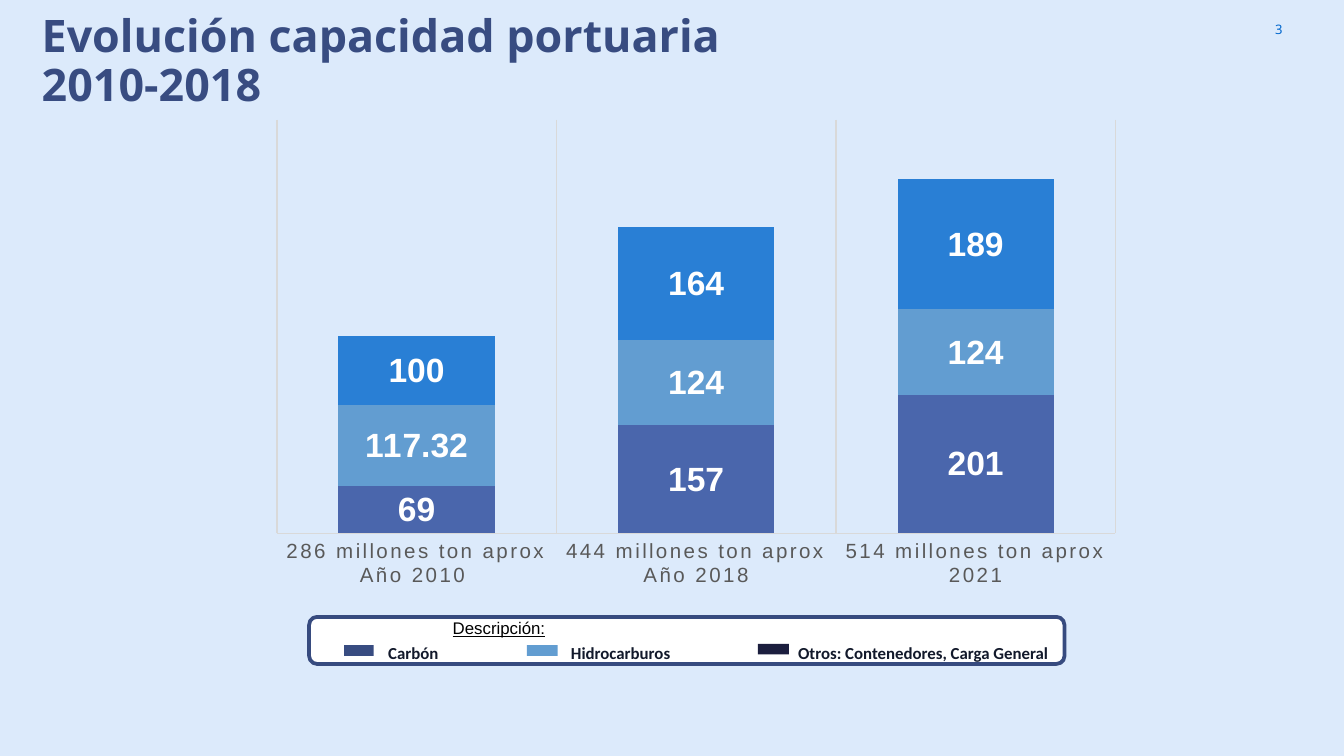
"""Build the port capacity slide with a stacked column chart and its legend."""
from dataclasses import dataclass

from lxml import etree
from pptx import Presentation
from pptx import util as u
from pptx.chart import data
from pptx.dml.color import RGBColor
from pptx.enum import chart as ch, shapes, text
from pptx.oxml import ns


@dataclass(frozen=True)
class Theme:
    back: str = "DCEAFB"
    navy: str = "384C81"
    frame: str = "374B7F"
    white: str = "FFFFFF"
    black: str = "000000"
    ink: str = "12192B"
    number: str = "0066CD"
    label: str = "595959"
    grid: str = "D9D9D9"
    head: str = "Noto Sans"
    body: str = "Arial"
    key: str = "Calibri"
    title: float = 24
    value: float = 18
    axis: float = 11
    small: float = 9
    page: float = 7


@dataclass(frozen=True)
class Box:
    left: float
    top: float
    width: float
    height: float

    def place(self) -> tuple:
        return tuple(u.Inches(v) for v in (self.left, self.top, self.width, self.height))


@dataclass(frozen=True)
class Series:
    name: str
    values: tuple
    color: str
    format: str


@dataclass(frozen=True)
class Key:
    label: str
    color: str
    swatch: Box
    box: Box


THEME = Theme()
CATS = ("286 millones ton aprox Año 2010 ", "444 millones ton aprox Año 2018",
        "514 millones ton aprox 2021")
SERIES = (
    Series("Series 1", (69, 157, 201), "4A66AC", "0"),
    Series("Series 2", (117.32, 124, 124), "629DD1", "General"),
    Series("Series 3", (100, 164, 189), "297FD5", "0"),
)
KEYS = (
    Key("Carbón", THEME.navy, Box(2.56, 4.8, 0.22, 0.08), Box(2.79, 4.73, 2.85, 0.25)),
    Key("Hidrocarburos", "629DD1", Box(3.92, 4.8, 0.23, 0.08), Box(4.15, 4.73, 1.96, 0.25)),
    Key("Otros: Contenedores, Carga General", "1B1E3E",
        Box(5.64, 4.79, 0.23, 0.08), Box(5.84, 4.73, 2.23, 0.25)),
)


def style(font, name: str, size: float, color: str, bold: bool = False) -> None:
    font.name, font.size, font.bold = name, u.Pt(size), bold
    font.color.rgb = RGBColor.from_string(color)


def add_text(slide, box: Box, words: str, name: str, size: float, color: str,
             bold: bool = False):
    shape = slide.shapes.add_textbox(*box.place())
    frame = shape.text_frame
    frame.word_wrap = True
    frame.text = words
    style(frame.paragraphs[0].runs[0].font, name, size, color, bold)
    return frame


def add_block(slide, kind, box: Box, fill: str, line: str = "") -> None:
    shape = slide.shapes.add_shape(kind, *box.place())
    shape.shadow.inherit = False
    shape.fill.solid()
    shape.fill.fore_color.rgb = RGBColor.from_string(fill)
    if line:
        shape.line.color.rgb = RGBColor.from_string(line)
        shape.line.width = u.Pt(2)
    else:
        shape.line.fill.background()


def add_title(slide, box: Box, words: str) -> None:
    title = slide.shapes.title
    title.left, title.top, title.width, title.height = box.place()
    frame = title.text_frame
    frame.text = words
    frame.word_wrap = True
    frame.auto_size = text.MSO_AUTO_SIZE.NONE
    frame.vertical_anchor = text.MSO_ANCHOR.MIDDLE
    frame.margin_left = frame.margin_right = u.Inches(0.07)
    frame.margin_top = frame.margin_bottom = u.Inches(0.04)
    for par in frame.paragraphs:
        par.alignment = text.PP_ALIGN.LEFT
        par.line_spacing = 0.9
        par.space_before = u.Pt(0)
        style(par.runs[0].font, THEME.head, THEME.title, THEME.navy, True)


def add_page(slide, box: Box, words: str) -> None:
    frame = add_text(slide, box, words, THEME.head, THEME.page, THEME.number)
    frame.vertical_anchor = text.MSO_ANCHOR.MIDDLE
    frame.margin_top = frame.margin_bottom = u.Inches(0.1)
    frame.paragraphs[0].alignment = text.PP_ALIGN.RIGHT


def set_plot(root) -> None:
    area = root.xpath("c:chart/c:plotArea")[0]
    for old in area.findall(ns.qn("c:layout")):
        area.remove(old)
    layout = etree.Element(ns.qn("c:layout"))
    manual = etree.SubElement(layout, ns.qn("c:manualLayout"))
    for tag, val in (("layoutTarget", "inner"), ("xMode", "edge"), ("yMode", "edge"),
                     ("x", "0.02"), ("y", "0.02"), ("w", "0.96"), ("h", "0.85")):
        etree.SubElement(manual, ns.qn(f"c:{tag}")).set("val", val)
    area.insert(0, layout)
    for props in root.xpath(".//c:catAx/c:txPr//a:defRPr"):
        props.set("spc", "120")


def add_bars(slide, box: Box) -> None:
    source = data.CategoryChartData()
    source.categories = CATS
    for item in SERIES:
        source.add_series(item.name, item.values)
    kind = ch.XL_CHART_TYPE.COLUMN_STACKED
    chart = slide.shapes.add_chart(kind, *box.place(), source).chart
    chart.has_title = chart.has_legend = False
    style(chart.font, THEME.body, 10, THEME.black)
    plot = chart.plots[0]
    plot.gap_width, plot.overlap, plot.vary_by_categories = 79, 100, False
    for bar, item in zip(plot.series, SERIES):
        bar.format.fill.solid()
        bar.format.fill.fore_color.rgb = RGBColor.from_string(item.color)
        labels = bar.data_labels
        labels.show_value = True
        labels.number_format = item.format
        labels.number_format_is_linked = False
        style(labels.font, THEME.body, THEME.value, THEME.white, True)
    scale = chart.value_axis
    scale.minimum_scale, scale.maximum_scale = 0, 600
    scale.has_major_gridlines = scale.visible = False
    axis = chart.category_axis
    axis.major_tick_mark = axis.minor_tick_mark = ch.XL_TICK_MARK.NONE
    axis.has_major_gridlines = True
    for line in (axis.format.line, axis.major_gridlines.format.line):
        line.color.rgb = RGBColor.from_string(THEME.grid)
        line.width = u.Pt(0.75)
    style(axis.tick_labels.font, THEME.body, THEME.axis, THEME.label)
    set_plot(chart.element)


def add_legend(slide) -> None:
    kinds = shapes.MSO_SHAPE
    add_block(slide, kinds.ROUNDED_RECTANGLE, Box(2.3, 4.59, 5.62, 0.35),
              THEME.white, THEME.frame)
    head = add_text(slide, Box(3.27, 4.55, 1.95, 0.25), "Descripción:",
                    THEME.body, THEME.small, THEME.black)
    head.paragraphs[0].runs[0].font.underline = True
    for key in KEYS:
        add_block(slide, kinds.RECTANGLE, key.swatch, key.color)
        add_text(slide, key.box, key.label, THEME.key, THEME.small, THEME.ink, True)


def main() -> None:
    deck = Presentation()
    deck.slide_width = u.Inches(10)
    deck.slide_height = deck.slide_width * 9 // 16
    slide = deck.slides.add_slide(deck.slide_layouts[5])
    slide.background.fill.solid()
    slide.background.fill.fore_color.rgb = RGBColor.from_string(THEME.back)
    add_page(slide, Box(9.04, 0, 0.6, 0.43), "3")
    add_title(slide, Box(0.24, 0.26, 6.59, 0.41),
              "Evolución capacidad portuaria\n2010-2018")
    add_legend(slide)
    add_bars(slide, Box(1.93, 0.82, 6.5, 3.62))
    deck.save("out.pptx")


if __name__ == "__main__":
    main()
